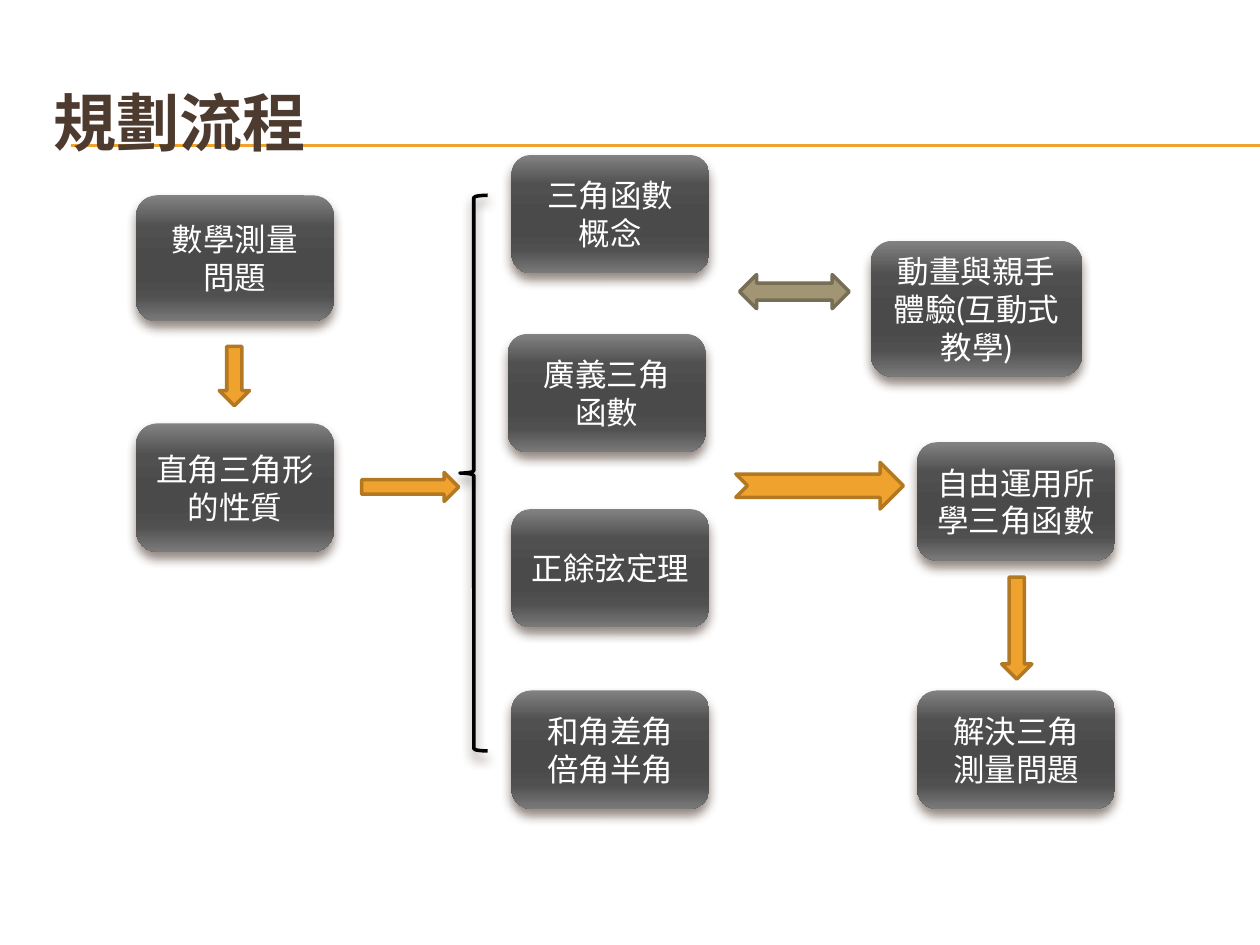
from typing import NamedTuple

from lxml import etree
from pptx import Presentation
from pptx.dml.color import RGBColor
from pptx.enum.shapes import MSO_CONNECTOR, MSO_SHAPE
from pptx.enum.text import MSO_ANCHOR, PP_ALIGN
from pptx.oxml import parse_xml
from pptx.oxml.ns import nsdecls, qn
from pptx.util import Inches, Pt

FONT = "Lato"
COLORS = {
    "brown": "4E3B30",
    "orange": "F0A22E",
    "orange_edge": "B27822",
    "olive": "A19574",
    "olive_edge": "776E56",
    "white": "FFFFFF",
    "black": "000000",
}
BOX_STOPS = [(0, "828282"), (25, "505050"), (50, "4A4A4A"),
             (65, "4A4A4A"), (80, "505050"), (100, "7A7A7A")]
BOX_WIDTH, BOX_HEIGHT = 1.57, 0.94
LEFT_X, MIDDLE_X, RIGHT_X = 1.08, 4.06, 7.28


class Step(NamedTuple):
    lines: list[str]
    left: float
    top: float
    width: float = BOX_WIDTH
    height: float = BOX_HEIGHT


class Arrow(NamedTuple):
    kind: MSO_SHAPE
    left: float
    top: float
    width: float
    height: float
    color: str = "orange"


STEPS = [
    Step(["數學測量", "問題"], LEFT_X, 1.55, height=1),
    Step(["直角三角形的性質"], LEFT_X, 3.36, height=1.02),
    Step(["三角函數", "概念"], MIDDLE_X, 1.23),
    Step(["廣義三角", "函數"], 4.03, 2.65),
    Step(["正餘弦定理"], MIDDLE_X, 4.04),
    Step(["和角差角", "倍角半角"], MIDDLE_X, 5.48),
    Step(["動畫與親手體驗(互動式教學)"], 6.91, 1.91, 1.68, 1.08),
    Step(["自由運用所學三角函數"], RIGHT_X, 3.51),
    Step(["解決三角", "測量問題"], RIGHT_X, 5.48),
]
ARROWS = [
    Arrow(MSO_SHAPE.DOWN_ARROW, 1.74, 2.75, 0.24, 0.47),
    Arrow(MSO_SHAPE.RIGHT_ARROW, 2.87, 3.75, 0.77, 0.23),
    Arrow(MSO_SHAPE.LEFT_RIGHT_ARROW, 5.87, 2.18, 0.87, 0.27, "olive"),
    Arrow(MSO_SHAPE.NOTCHED_RIGHT_ARROW, 5.84, 3.67, 1.33, 0.37),
    Arrow(MSO_SHAPE.DOWN_ARROW, 7.95, 4.58, 0.24, 0.81),
]


def rgb(name: str) -> RGBColor:
    return RGBColor.from_string(COLORS[name])


def add_outline(shape, color: str, width: float) -> None:
    shape.line.color.rgb = rgb(color)
    shape.line.width = Pt(width)


def add_soft_shadow(shape) -> None:
    """Drop a blurred brown shadow straight down."""
    shape.shadow.inherit = False
    effects = shape._element.spPr.find(qn("a:effectLst"))
    effects.append(parse_xml(
        f'<a:outerShdw {nsdecls("a")} blurRad="{Pt(6)}" dist="{Pt(4)}" '
        f'dir="5400000" rotWithShape="0"><a:srgbClr val="{COLORS["brown"]}">'
        '<a:alpha val="60000"/></a:srgbClr></a:outerShdw>'))


def fill_with_gradient(shape) -> None:
    """Fill from top to bottom with the six box stops."""
    shape.fill.gradient()
    gradient = shape._element.spPr.find(qn("a:gradFill"))
    stops = gradient.find(qn("a:gsLst"))
    for stop in list(stops):
        stops.remove(stop)
    for position, color in BOX_STOPS:
        stop = etree.SubElement(stops, qn("a:gs"), pos=str(position * 1000))
        etree.SubElement(stop, qn("a:srgbClr"), val=color)
    gradient.find(qn("a:lin")).set("ang", "5400000")


def add_text(frame, lines: list[str], size: int, color: str,
             align: PP_ALIGN, bold: bool = False) -> None:
    frame.word_wrap = True
    frame.vertical_anchor = MSO_ANCHOR.MIDDLE
    for index, line in enumerate(lines):
        paragraph = frame.add_paragraph() if index else frame.paragraphs[0]
        paragraph.alignment = align
        run = paragraph.add_run()
        run.text = line
        run.font.name = FONT
        run.font.size = Pt(size)
        run.font.bold = bold
        run.font.color.rgb = rgb(color)


def add_preset(slide, kind: MSO_SHAPE, left: float, top: float,
               width: float, height: float):
    return slide.shapes.add_shape(kind, Inches(left), Inches(top),
                                  Inches(width), Inches(height))


def add_step(slide, step: Step) -> None:
    box = add_preset(slide, MSO_SHAPE.ROUNDED_RECTANGLE, *step[1:])
    fill_with_gradient(box)
    box.line.fill.background()
    add_soft_shadow(box)
    add_text(box.text_frame, step.lines, 18, "white", PP_ALIGN.CENTER)


def add_arrow(slide, arrow: Arrow) -> None:
    shape = add_preset(slide, *arrow[:5])
    shape.shadow.inherit = False
    shape.fill.solid()
    shape.fill.fore_color.rgb = rgb(arrow.color)
    add_outline(shape, f"{arrow.color}_edge", 2)


def add_brace(slide) -> None:
    brace = add_preset(slide, MSO_SHAPE.LEFT_BRACE, 3.65, 1.55, 0.22, 4.41)
    brace.fill.background()
    add_outline(brace, "black", 2)
    add_soft_shadow(brace)


def add_title_rule(slide, top: float) -> None:
    rule = slide.shapes.add_connector(MSO_CONNECTOR.STRAIGHT, Inches(0.56),
                                      Inches(top), Inches(10), Inches(top))
    add_outline(rule, "orange", 0.75)
    etree.SubElement(rule._element.spPr, qn("a:effectLst"))


def add_title(slide) -> None:
    title = slide.shapes.add_textbox(Inches(0.33), Inches(0.5),
                                     Inches(9.5), Inches(0.92))
    add_text(title.text_frame, ["規劃流程"], 36, "brown", PP_ALIGN.LEFT, bold=True)


def main() -> None:
    presentation = Presentation()
    presentation.slide_width = Inches(10)
    presentation.slide_height = Inches(7.5)
    slide = presentation.slides.add_slide(presentation.slide_layouts[6])
    for top in (1.15, 1.16):
        add_title_rule(slide, top)
    add_title(slide)
    for step in STEPS:
        add_step(slide, step)
    add_brace(slide)
    for arrow in ARROWS:
        add_arrow(slide, arrow)
    presentation.save("out.pptx")


if __name__ == "__main__":
    main()
